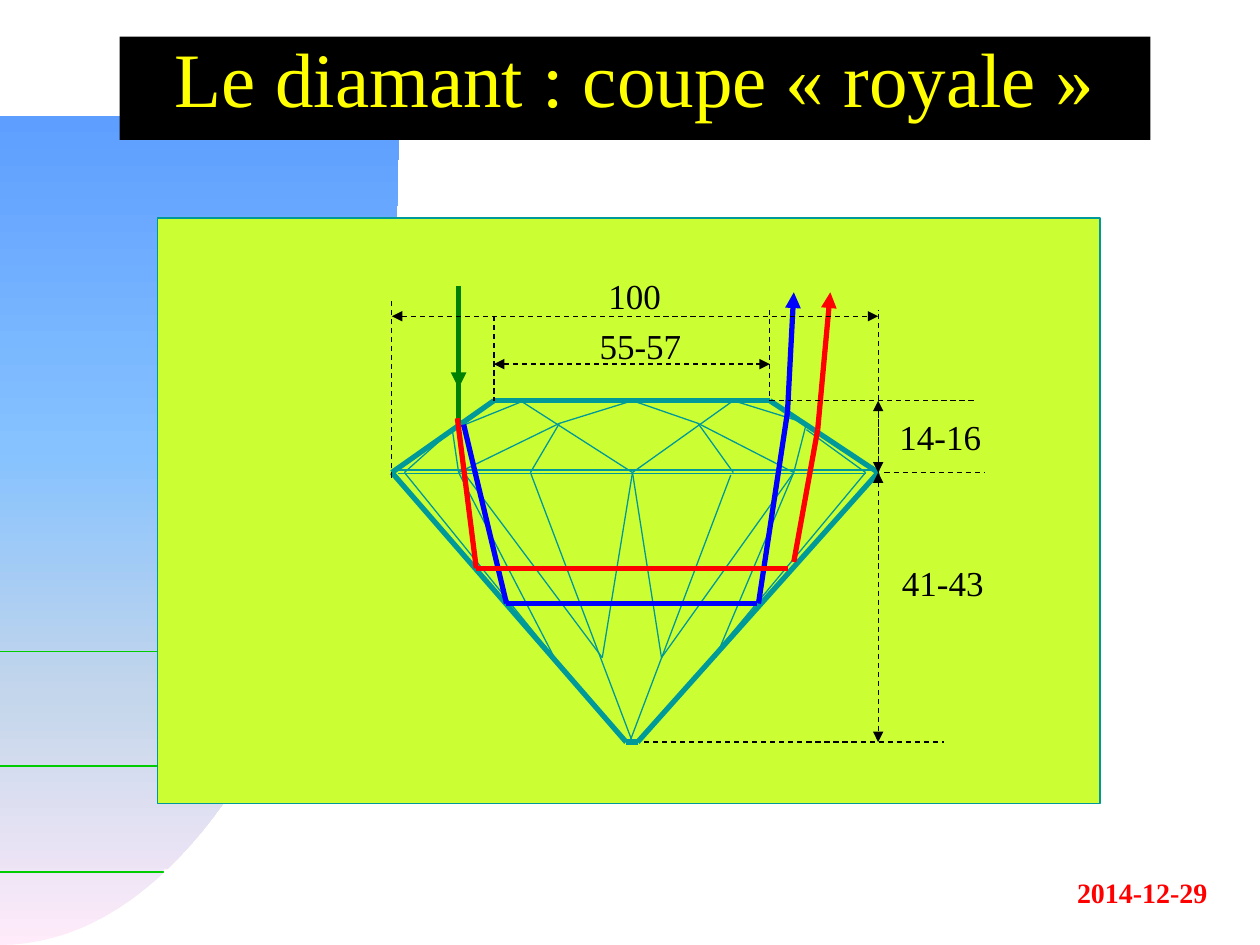
from itertools import pairwise

from lxml import etree
from pptx import Presentation
from pptx import util as u
from pptx.dml.color import RGBColor
from pptx.enum import dml, shapes, text
from pptx.oxml import ns

COLORS = {
    "ink": "010000", "yellow": "FFFF00", "lime": "CCFF33", "teal": "009999",
    "green": "008000", "rule": "00CC00", "red": "FF0000", "blue": "0000FF",
    "white": "FFFFFF",
}
SKY = [(0, "FFEBFA"), (30, "C4D6EB"), (60, "85C2FF"), (100, "5E9EFF")]


class Deck:
    font = "Times New Roman"

    def __init__(self, prs):
        self.slide = prs.slides.add_slide(prs.slide_layouts[6])
        self.shapes = self.slide.shapes

    def group(self):
        self.shapes = self.slide.shapes.add_group_shape().shapes

    def color(self, name):
        return RGBColor.from_string(COLORS[name])

    def line(self, start, end, color, width=0.75, dash=False, head=False, tail=False):
        ends = [u.Inches(v) for v in (*start, *end)]
        c = self.shapes.add_connector(shapes.MSO_CONNECTOR.STRAIGHT, *ends)
        c.line.color.rgb = self.color(color)
        c.line.width = u.Pt(width)
        if dash:
            c.line.dash_style = dml.MSO_LINE.DASH
        ln = c._element.spPr.find(ns.qn("a:ln"))
        for tag, wanted in (("a:headEnd", head), ("a:tailEnd", tail)):
            if wanted:
                etree.SubElement(ln, ns.qn(tag), type="triangle")
        etree.SubElement(c._element.spPr, ns.qn("a:effectLst"))

    def chain(self, points, color, width=0.75):
        for start, end in pairwise(points):
            self.line(start, end, color, width)

    def rect(self, x, y, w, h, fill, line=None):
        sp = self.shapes.add_shape(shapes.MSO_SHAPE.RECTANGLE, *map(u.Inches, (x, y, w, h)))
        sp.shadow.inherit = False
        sp.fill.solid()
        sp.fill.fore_color.rgb = self.color(fill)
        if line:
            sp.line.color.rgb = self.color(line)
            sp.line.width = u.Pt(0.75)
        else:
            sp.line.fill.background()
        return sp

    def set_text(self, sp, words, size, color, align, bold=False):
        tf = sp.text_frame
        tf.word_wrap = True
        p = tf.paragraphs[0]
        p.text = words
        p.alignment = align
        p.font.name = self.font
        p.font.size = u.Pt(size)
        p.font.bold = bold
        p.font.color.rgb = self.color(color)
        return tf

    def label(self, x, y, w, h, words, size=20, color="ink", align=text.PP_ALIGN.LEFT, bold=False):
        sp = self.shapes.add_textbox(*map(u.Inches, (x, y, w, h)))
        self.set_text(sp, words, size, color, align, bold)

    def title(self, x, y, w, h, words):
        tf = self.set_text(self.rect(x, y, w, h, "ink"), words, 44, "yellow", text.PP_ALIGN.CENTER)
        tf.vertical_anchor = text.MSO_ANCHOR.MIDDLE
        tf.paragraphs[0].line_spacing = 0.7

    def quarter_sweep(self, top, bottom, right, control_x, control_y, steps=48):
        points = []
        for i in range(steps + 1):
            t = i / steps
            a, b, c = 3 * t * (1 - t) ** 2, 3 * t ** 2 * (1 - t), t ** 3
            x = a * control_x + (b + c) * right
            y = ((1 - t) ** 3 + a) * bottom + b * control_y + c * top
            points.append((u.Inches(x), u.Inches(y)))
        fb = self.shapes.build_freeform(*points[0], scale=1.0)
        fb.add_line_segments(points[1:] + [(0, u.Inches(top))], close=True)
        sp = fb.convert_to_shape()
        sp.shadow.inherit = False
        sp.line.fill.background()
        sp.fill.gradient()
        sp.fill.gradient_angle = 90
        stops = sp._element.spPr.find(".//" + ns.qn("a:gsLst"))
        for old in list(stops):
            stops.remove(old)
        for pos, rgb in SKY:
            gs = etree.SubElement(stops, ns.qn("a:gs"), pos=str(pos * 1000))
            etree.SubElement(gs, ns.qn("a:srgbClr"), val=rgb)


def draw_background(d):
    d.quarter_sweep(top=0.92, bottom=7.5, right=3.17, control_x=1.75, control_y=4.56)
    for y, end in ((6.92, 1.33), (6.08, 1.92), (5.17, 2.42)):
        d.line((0, y), (end, y), "rule")
    d.label(7.43, 6.9, 2.25, 0.37, "2014-12-29", 16, "red", text.PP_ALIGN.RIGHT, True)
    d.rect(1.3, 6.9, 1.88, 0.37, "white")


def draw_diamond(d):
    d.group()
    outline = [(3.92, 3.18), (6.11, 3.18), (6.97, 3.75), (5.06, 5.89),
               (4.97, 5.89), (3.11, 3.75), (3.92, 3.18)]
    d.chain(outline, "teal", 3)
    pavilion = [
        [(4.21, 3.75), (5.02, 5.89)],
        [(5.8, 3.77), (4.99, 5.91)],
        [(3.68, 3.75), (4.78, 5.22), (5.02, 3.75), (5.25, 5.22), (6.3, 3.75), (5.68, 5.22)],
        [(3.64, 3.75), (4.4, 5.22), (3.21, 3.75)],
        [(5.68, 5.18), (6.87, 3.75)],
    ]
    crown = [
        [(4.13, 3.18), (5.02, 3.75), (5.82, 3.18), (6.4, 3.36), (6.3, 3.75),
         (5.54, 3.36), (5.02, 3.18), (4.44, 3.36), (3.64, 3.75), (3.59, 3.41)],
        [(4.44, 3.36), (4.21, 3.75)],
        [(5.54, 3.36), (5.82, 3.75)],
        [(4.16, 3.18), (3.59, 3.41), (3.21, 3.75)],
        [(6.4, 3.41), (6.87, 3.75)],
    ]
    girdle = [[(3.16, 3.73), (6.92, 3.73)], [(3.16, 3.76), (6.87, 3.76)]]
    for facet in pavilion + crown + girdle:
        d.chain(facet, "teal")


def draw_rays(d):
    d.group()
    d.line((6.49, 3.41), (6.59, 2.32), "red", 3, tail=True)
    d.line((6.02, 4.79), (6.25, 3.27), "blue", 3)
    d.line((6.25, 3.27), (6.3, 2.32), "blue", 3, tail=True)
    d.line((6.3, 4.46), (6.49, 3.41), "red", 3)
    d.group()
    d.line((3.64, 2.27), (3.64, 3.36), "green", 3)
    d.line((3.64, 2.6), (3.64, 3.08), "green", 3, tail=True)
    d.line((3.63, 3.32), (3.78, 4.51), "red", 3)
    d.line((3.68, 3.37), (4.02, 4.79), "blue", 3)
    d.group()
    d.line((3.78, 4.51), (6.25, 4.51), "red", 3)
    d.line((4.02, 4.79), (6.01, 4.79), "blue", 3)


def draw_dimensions(d):
    d.group()
    left, table_left, table_right, right = 3.11, 3.92, 6.11, 6.97
    table, girdle, culet = 3.18, 3.75, 5.89
    guides = [
        ((table_left, 2.51), (table_left, table)),
        ((table_right, 2.46), (table_right, table)),
        ((table_right, table), (7.73, table)),
        ((7.02, girdle), (7.82, girdle)),
        ((5.11, culet), (7.49, culet)),
        ((left, 3.79), (left, 2.36)),
        ((right, girdle), (right, 2.46)),
    ]
    measures = [
        ((right, table), (right, girdle)),
        ((right, girdle), (right, culet)),
        ((table_left, 2.89), (table_right, 2.89)),
        ((left, 2.51), (right, 2.51)),
    ]
    for start, end in guides:
        d.line(start, end, "ink", dash=True)
    for start, end in measures:
        d.line(start, end, "ink", dash=True, head=True, tail=True)
    for x, y, w, words in ((4.73, 2.13, 0.76, "100"), (4.66, 2.53, 1.05, "55-57"),
                           (7.04, 3.25, 1, "14-16"), (7.06, 4.41, 0.95, "41-43")):
        d.label(x, y, w, 0.43, words)


def main():
    prs = Presentation()
    prs.slide_width, prs.slide_height = u.Inches(10), u.Inches(7.5)
    d = Deck(prs)
    draw_background(d)
    d.title(0.95, 0.29, 8.18, 0.82, "Le diamant : coupe « royale »")
    d.rect(1.25, 1.73, 7.48, 4.65, "lime", "teal")
    draw_diamond(d)
    draw_rays(d)
    draw_dimensions(d)
    prs.save("out.pptx")


if __name__ == "__main__":
    main()
